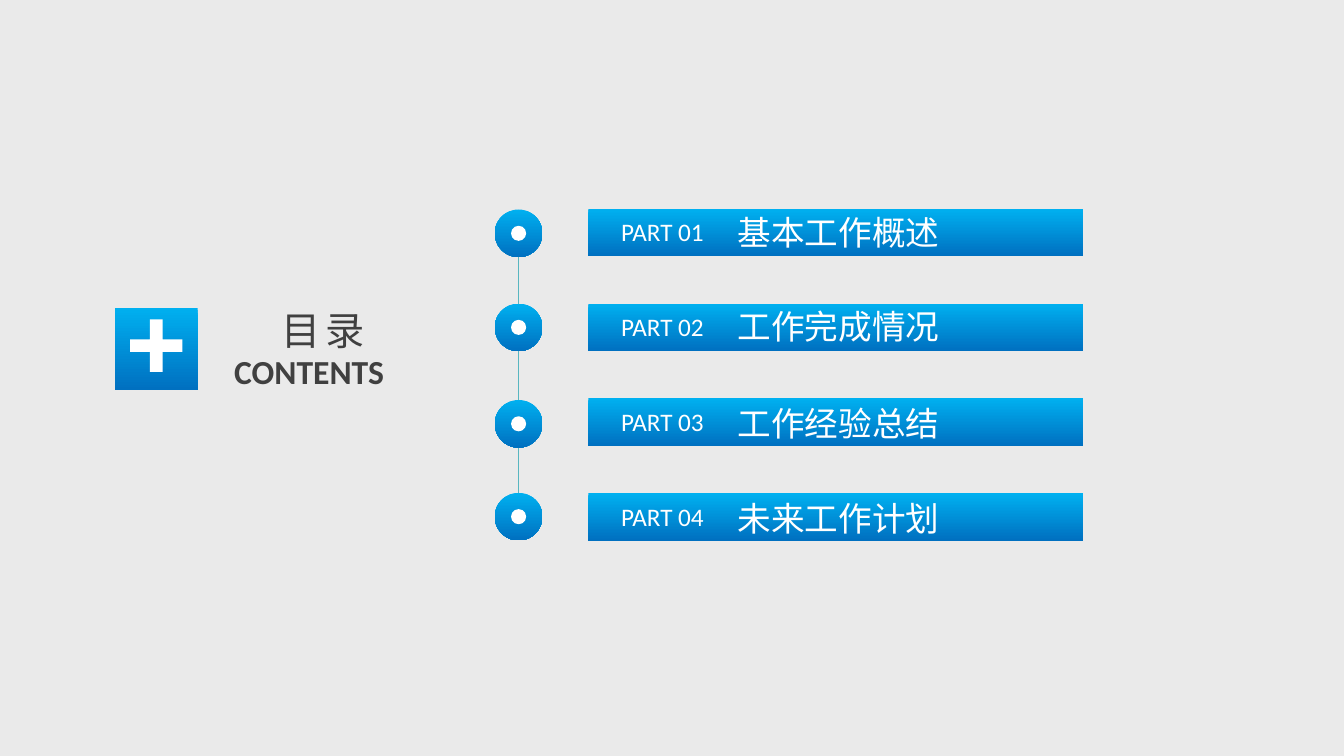
from dataclasses import dataclass
from lxml.etree import SubElement
from pptx import Presentation
from pptx.dml.color import RGBColor
from pptx.enum.shapes import MSO_CONNECTOR, MSO_SHAPE
from pptx.enum.text import MSO_ANCHOR, PP_ALIGN
from pptx.oxml.ns import qn
from pptx.util import Cm, Pt


@dataclass(frozen=True)
class Theme:
    font: str = "Calibri"
    back: RGBColor = RGBColor(0xEA, 0xEA, 0xEA)
    light: RGBColor = RGBColor(0x00, 0xB0, 0xF0)
    deep: RGBColor = RGBColor(0x00, 0x70, 0xC0)
    rail: RGBColor = RGBColor(0x58, 0xB6, 0xC0)
    white: RGBColor = RGBColor(0xFF, 0xFF, 0xFF)
    dark: RGBColor = RGBColor(0x40, 0x40, 0x40)
    head: int = 28
    title: int = 24
    label: int = 18


theme = Theme()
deck = Presentation()
deck.slide_width, deck.slide_height = Cm(33.87), Cm(19.05)
slide = deck.slides.add_slide(deck.slide_layouts[6])
slide.background.fill.solid()
slide.background.fill.fore_color.rgb = theme.back


def add_form(kind, left, top, width, height, color=None):
    form = slide.shapes.add_shape(kind, Cm(left), Cm(top), Cm(width), Cm(height))
    form.shadow.inherit = False
    form.line.fill.background()
    if color is not None:
        form.fill.solid()
        form.fill.fore_color.rgb = color
        return form
    form.fill.gradient()
    form.fill.gradient_angle = 270
    for stop, shade in zip(form.fill.gradient_stops, (theme.light, theme.deep)):
        stop.color.rgb = shade
    return form


def add_words(words, left, top, width, height, size, color, align=PP_ALIGN.CENTER):
    box = slide.shapes.add_textbox(Cm(left), Cm(top), Cm(width), Cm(height))
    box.text_frame.word_wrap = True
    para = box.text_frame.paragraphs[0]
    para.alignment = align
    run = para.add_run()
    run.text = words
    run.font.name = theme.font
    run.font.size = Pt(size)
    run.font.color.rgb = color
    return box.text_frame, run


rail = slide.shapes.add_connector(
    MSO_CONNECTOR.STRAIGHT, Cm(13.07), Cm(5.72), Cm(13.07), Cm(13.2))
rail.line.color.rgb = theme.rail
rail.line.width = Pt(0.5)
SubElement(rail._element.spPr, qn("a:effectLst"))

parts = [
    ("基本工作概述", 5.28, 5.21),
    ("工作完成情况", 7.65, 7.59),
    ("工作经验总结", 10.08, 10.03),
    ("未来工作计划", 12.42, 12.42),
]
dot, hole = 1.2, 0.38
inset = (dot - hole) / 2
for index, (title, dot_top, title_top) in enumerate(parts):
    top = 5.26 + 2.39 * index
    add_form(MSO_SHAPE.OVAL, 12.47, dot_top, dot, dot)
    add_form(MSO_SHAPE.OVAL, 12.47 + inset, dot_top + inset, hole, hole, theme.white)
    add_form(MSO_SHAPE.RECTANGLE, 14.83, top, 12.47, 1.2)
    add_words(f"PART {index + 1:02}", 14.83, top + 0.07, 3.73, 1.02,
              theme.label, theme.white)
    add_words(title, 18.34, title_top, 8.13, 1.27,
              theme.title, theme.white, PP_ALIGN.LEFT)

add_form(MSO_SHAPE.RECTANGLE, 2.9, 7.75, 2.08, 2.08)
frame, run = add_words("目录", 4.78, 7.49, 6.73, 1.65, theme.head, theme.dark)
frame.vertical_anchor = MSO_ANCHOR.MIDDLE
run._r.get_or_add_rPr().set("spc", "300")
frame, run = add_words("CONTENTS", 4.88, 8.71, 5.82, 1.32, theme.title, theme.dark)
run.font.bold = True
plus = add_form(MSO_SHAPE.CROSS, 3.28, 8.05, 1.32, 1.32, theme.white)
plus.adjustments[0] = 0.38

deck.save("out.pptx")
